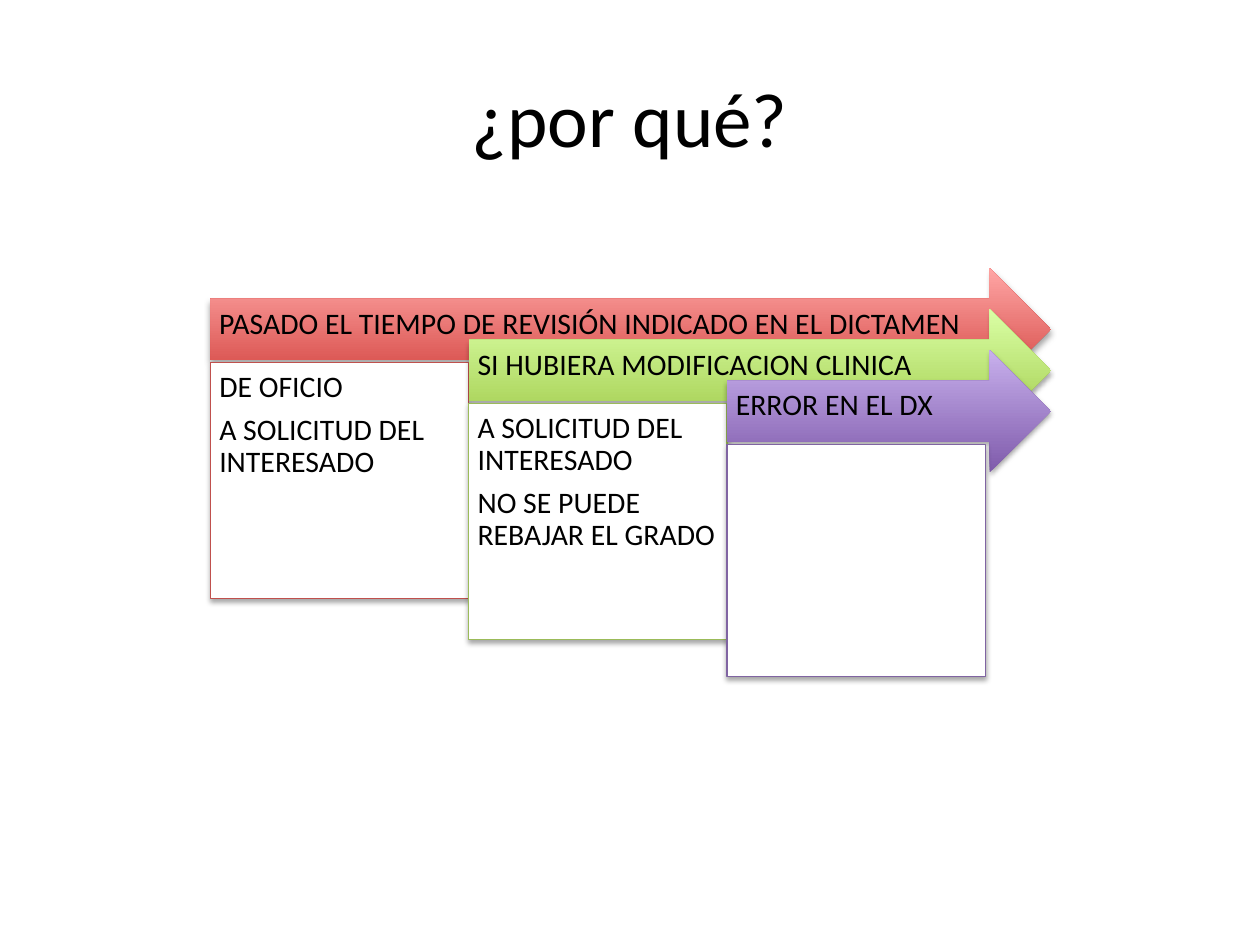
from lxml.etree import SubElement
from pptx import Presentation
from pptx.dml.color import RGBColor
from pptx.enum.shapes import MSO_SHAPE as Shape
from pptx.enum.text import MSO_ANCHOR as Anchor, PP_ALIGN as Align
from pptx.oxml.ns import qn
from pptx.util import Inches, Pt

# Content
TITLE = "¿por qué?"
STEPS = [
    {"heading": "PASADO EL TIEMPO DE REVISIÓN INDICADO EN EL DICTAMEN",
     "details": ["DE OFICIO", "A SOLICITUD DEL INTERESADO"],
     "color": "red", "box_height": 1.87},
    {"heading": "SI HUBIERA MODIFICACION CLINICA",
     "details": ["A SOLICITUD DEL INTERESADO", "NO SE PUEDE REBAJAR EL GRADO"],
     "color": "green", "box_height": 1.87},
    {"heading": "ERROR EN EL DX", "details": [],
     "color": "purple", "box_height": 1.84},
]

# Style
FONT = "Calibri"
COLORS = {
    "text": "000000", "box": "FFFFFF", "shadow": "000000",
    "red_dark": "D1403C", "red_light": "FFA6A5", "red_line": "C0504D",
    "green_dark": "A0CA4A", "green_light": "DAFFA5", "green_line": "9BBB59",
    "purple_dark": "7F5BAB", "purple_light": "C8B0ED", "purple_line": "8064A2",
}

# Layout in inches
LEFT, RIGHT, TOP = 1.67, 8.34, 2.13
COLUMN_WIDTH, STEP_DOWN = 2.05, 0.325
ARROW_HEIGHT, BOX_OFFSET = 0.97, 0.75
PADDING = 0.07


def color(name):
    return RGBColor.from_string(COLORS[name])


def add_shadow(shape):
    shape.shadow.inherit = False
    effects = shape._element.spPr.find(qn("a:effectLst"))
    shadow = SubElement(effects, qn("a:outerShdw"), blurRad=str(Pt(3.1)),
                        dist=str(Pt(1.8)), dir="5400000", rotWithShape="0")
    tint = SubElement(shadow, qn("a:srgbClr"), val=COLORS["shadow"])
    SubElement(tint, qn("a:alpha"), val="35000")


def add_shape(slide, kind, left, top, width, height):
    shape = slide.shapes.add_shape(
        kind, Inches(left), Inches(top), Inches(width), Inches(height))
    add_shadow(shape)
    return shape


def add_text(slide, lines, left, top, width, height, size=17, anchor=Anchor.TOP,
             align=Align.LEFT, right=PADDING, bottom=PADDING, line_spacing=0.9,
             space_after=6):
    box = slide.shapes.add_textbox(
        Inches(left), Inches(top), Inches(width), Inches(height))
    frame = box.text_frame
    frame.word_wrap = True
    frame.vertical_anchor = anchor
    frame.margin_left = frame.margin_top = Inches(PADDING)
    frame.margin_right, frame.margin_bottom = Inches(right), Inches(bottom)
    for index, line in enumerate(lines):
        paragraph = frame.add_paragraph() if index else frame.paragraphs[0]
        paragraph.alignment = align
        paragraph.line_spacing = line_spacing
        paragraph.space_after = Pt(space_after)
        run = paragraph.add_run()
        run.text = line
        run.font.name, run.font.size = FONT, Pt(size)
        run.font.color.rgb = color("text")


def add_step(slide, index, step):
    left = LEFT + index * COLUMN_WIDTH
    top = TOP + index * STEP_DOWN
    width = RIGHT - left

    # Arrow, dark at the bottom and light at the top
    arrow = add_shape(slide, Shape.RIGHT_ARROW, left, top, width, ARROW_HEIGHT)
    arrow.line.fill.background()
    arrow.fill.gradient()
    arrow.fill.gradient_angle = 90
    for stop, position, shade in zip(arrow.fill.gradient_stops, (0, 1), ("dark", "light")):
        stop.position = position
        stop.color.rgb = color(f"{step['color']}_{shade}")
    add_text(slide, [step["heading"]], left, top + ARROW_HEIGHT / 4,
             width - ARROW_HEIGHT / 4, ARROW_HEIGHT / 2,
             anchor=Anchor.MIDDLE, right=0.28, bottom=0.15, space_after=0)

    # Detail box under the arrow
    area = (left, top + BOX_OFFSET, COLUMN_WIDTH, step["box_height"])
    box = add_shape(slide, Shape.RECTANGLE, *area)
    box.fill.solid()
    box.fill.fore_color.rgb = color("box")
    box.line.color.rgb = color(f"{step['color']}_line")
    box.line.width = Pt(0.75)
    if step["details"]:
        add_text(slide, step["details"], *area)


def main():
    presentation = Presentation()
    presentation.slide_width, presentation.slide_height = Inches(10), Inches(7.5)
    slide = presentation.slides.add_slide(presentation.slide_layouts[6])
    add_text(slide, [TITLE], 0.5, 0.3, 9, 1.25, size=44, anchor=Anchor.MIDDLE,
             align=Align.CENTER, line_spacing=1, space_after=0)
    for index, step in enumerate(STEPS):
        add_step(slide, index, step)
    presentation.save("out.pptx")


if __name__ == "__main__":
    main()
